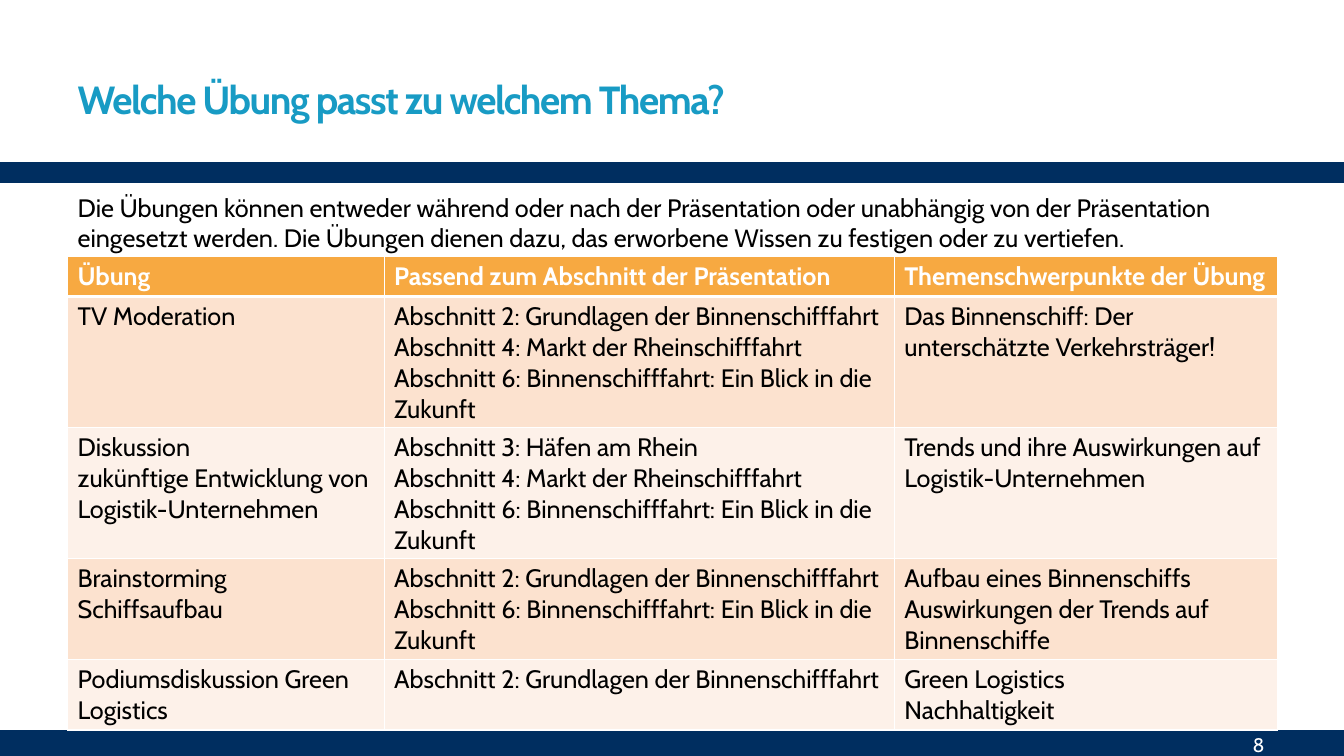
from dataclasses import dataclass

from lxml.etree import SubElement
from pptx import Presentation
from pptx.dml.color import RGBColor
from pptx.enum.shapes import MSO_SHAPE as Preset
from pptx.enum.text import MSO_ANCHOR as Anchor, MSO_AUTO_SIZE as AutoSize, PP_ALIGN as Align
from pptx.oxml.ns import qn
from pptx.util import Inches, Pt


@dataclass(frozen=True)
class Theme:
    font: str = "Cabin"
    navy: str = "002E60"
    heading: str = "189BC4"
    text: str = "000000"
    white: str = "FFFFFF"
    header: str = "F7A941"
    bands: tuple = ("FCE2CF", "FDF1E9")
    title_size: int = 28
    text_size: int = 18
    number_size: int = 14


HEADINGS = ["Übung", "Passend zum Abschnitt der Präsentation", "Themenschwerpunkte der Übung"]
BASICS = "Abschnitt 2: Grundlagen der Binnenschifffahrt"
HARBOURS = "Abschnitt 3: Häfen am Rhein"
MARKET = "Abschnitt 4: Markt der Rheinschifffahrt"
FUTURE = "Abschnitt 6: Binnenschifffahrt: Ein Blick in die Zukunft"

# Each cell holds its paragraphs separated by "|"; "\n" is a line break.
EXERCISES = [
    ["TV Moderation", "|".join([BASICS, MARKET, FUTURE]),
     "Das Binnenschiff: Der unterschätzte Verkehrsträger!"],
    ["Diskussion\nzukünftige Entwicklung von Logistik-Unternehmen",
     "|".join([HARBOURS, MARKET, FUTURE]),
     "Trends und ihre Auswirkungen auf Logistik-Unternehmen"],
    ["Brainstorming Schiffsaufbau", "|".join([BASICS, FUTURE]),
     "Aufbau eines Binnenschiffs|Auswirkungen der Trends auf Binnenschiffe"],
    ["Podiumsdiskussion Green Logistics", BASICS, "Green Logistics|Nachhaltigkeit"],
]
COLUMN_WIDTHS = [3.14, 5.06, 3.8]
ROW_HEIGHTS = [0.38, 1.24, 1.24, 0.96, 0.67]


class SlideBuilder:
    def __init__(self, slide, theme):
        self.slide = slide
        self.theme = theme

    def add_text(self, frame, text, size, color, bold=False, align=Align.LEFT):
        """Fill a text frame; return its runs."""
        frame.word_wrap = True
        runs = []
        for index, line in enumerate(text.split("|")):
            paragraph = frame.add_paragraph() if index else frame.paragraphs[0]
            paragraph.alignment = align
            for part_index, part in enumerate(line.split("\n")):
                if part_index:
                    paragraph.add_line_break()
                run = paragraph.add_run()
                run.text = part
                run.font.name = self.theme.font
                run.font.size = Pt(size)
                run.font.bold = bold
                run.font.color.rgb = RGBColor.from_string(color)
                runs.append(run)
        return runs

    def place(self, placeholder, left, top, width, height, anchor):
        placeholder.left, placeholder.top = Inches(left), Inches(top)
        placeholder.width, placeholder.height = Inches(width), Inches(height)
        frame = placeholder.text_frame
        frame.auto_size = AutoSize.NONE
        frame.vertical_anchor = anchor
        return frame

    def bar(self, left, top, width, height):
        bar = self.slide.shapes.add_shape(
            Preset.RECTANGLE, Inches(left), Inches(top), Inches(width), Inches(height))
        bar.shadow.inherit = False
        bar.fill.solid()
        bar.fill.fore_color.rgb = bar.line.color.rgb = RGBColor.from_string(self.theme.navy)
        bar.line.width = Pt(2.08)

    def title(self, text):
        frame = self.place(self.slide.shapes.title, 0.67, 0.44, 6.94, 1.08, Anchor.MIDDLE)
        for run in self.add_text(frame, text, self.theme.title_size, self.theme.heading, bold=True):
            run._r.get_or_add_rPr().set("spc", "-100")

    def intro(self, text):
        frame = self.place(self.slide.placeholders[1], 0.67, 1.86, 12, 5.22, Anchor.TOP)
        self.add_text(frame, text, self.theme.text_size, self.theme.text)
        properties = frame.paragraphs[0]._p.get_or_add_pPr()
        properties.set("marL", "0")
        properties.set("indent", "0")
        SubElement(properties, qn("a:buNone"))

    def page_number(self, number):
        box = self.slide.shapes.add_textbox(
            Inches(11.08), Inches(7.21), Inches(1.56), Inches(0.36))
        box.text_frame.vertical_anchor = Anchor.MIDDLE
        self.add_text(box.text_frame, number, self.theme.number_size, self.theme.white,
                      align=Align.RIGHT)

    def cell_borders(self, cell, top, bottom):
        """Draw white cell edges; top and bottom are widths in points."""
        properties = cell._tc.get_or_add_tcPr()
        for side, width in (("L", 1), ("R", 1), ("T", top), ("B", bottom)):
            edge = SubElement(properties, qn(f"a:ln{side}"), w=str(Pt(width)))
            fill = SubElement(edge, qn("a:solidFill"))
            SubElement(fill, qn("a:srgbClr"), val=self.theme.white)

    def exercise_table(self, headings, exercises):
        theme = self.theme
        rows = [headings, *exercises]
        table = self.slide.shapes.add_table(
            len(rows), len(headings), Inches(0.67), Inches(2.54),
            Inches(sum(COLUMN_WIDTHS)), Inches(sum(ROW_HEIGHTS))).table
        for column, width in zip(table.columns, COLUMN_WIDTHS):
            column.width = Inches(width)
        for index, (row, height, texts) in enumerate(zip(table.rows, ROW_HEIGHTS, rows)):
            row.height = Inches(height)
            is_header = index == 0
            band = theme.header if is_header else theme.bands[(index - 1) % 2]
            color = theme.white if is_header else theme.text
            for cell, text in zip(row.cells, texts):
                self.cell_borders(cell, 3 if index == 1 else 1, 3 if is_header else 1)
                cell.fill.solid()
                cell.fill.fore_color.rgb = RGBColor.from_string(band)
                self.add_text(cell.text_frame, text, theme.text_size, color, bold=is_header)


def main():
    deck = Presentation()
    deck.slide_width, deck.slide_height = Inches(13.33), Inches(7.5)
    page = SlideBuilder(deck.slides.add_slide(deck.slide_layouts[1]), Theme())
    page.bar(-0.06, 7.26, 13.54, 0.5)
    page.bar(0, 1.62, 13.49, 0.18)
    page.title("Welche Übung passt zu welchem Thema?")
    page.intro("Die Übungen können entweder während oder nach der Präsentation oder "
               "unabhängig von der Präsentation eingesetzt werden. Die Übungen dienen dazu, "
               "das erworbene Wissen zu festigen oder zu vertiefen.")
    page.page_number("8")
    page.exercise_table(HEADINGS, EXERCISES)
    deck.save("out.pptx")


if __name__ == "__main__":
    main()
